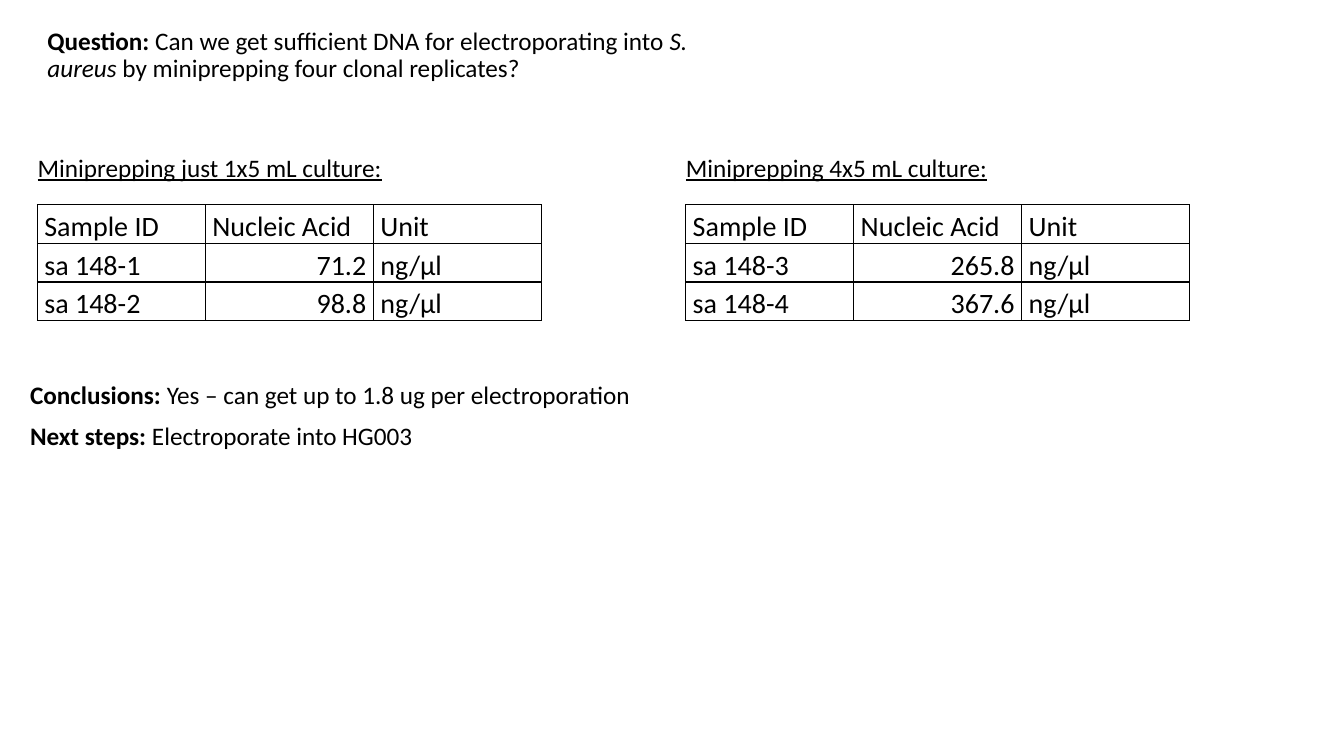
from dataclasses import dataclass
from lxml.etree import SubElement as Sub
from pptx import Presentation as Deck
from pptx.dml.color import RGBColor as Rgb
from pptx.enum.text import MSO_ANCHOR as Anchor, MSO_AUTO_SIZE as Fit, PP_ALIGN as Align
from pptx.oxml.ns import qn
from pptx.util import Inches, Pt


@dataclass(frozen=True)
class Theme:
    font: str = "Calibri"
    ink: Rgb = Rgb(0, 0, 0)
    body: int = 18
    grid: int = 20
    rule: int = 1
    pad: float = 0.07


def write(para, text, theme, size=None, bold=False, italic=False, under=False):
    run = para.add_run()
    run.text = text
    font = run.font
    font.name, font.size = theme.font, Pt(size or theme.body)
    font.bold, font.italic, font.underline = bold, italic, under
    font.color.rgb = theme.ink


class Page:
    def __init__(self, deck, theme):
        self.theme = theme
        self.wide, self.high = deck.slide_width, deck.slide_height
        self.slide = deck.slides.add_slide(deck.slide_layouts[5])

    def area(self, left, top, width, height):
        return [round(share * side / 100) for share, side in
                zip((left, top, width, height), (self.wide, self.high) * 2)]

    def fill(self, shape, paras, line=None, before=0, fit=Fit.NONE):
        frame = shape.text_frame
        frame.word_wrap, frame.auto_size = True, fit
        frame.vertical_anchor = Anchor.TOP
        for n, parts in enumerate(paras):
            para = frame.add_paragraph() if n else frame.paragraphs[0]
            para.alignment = Align.LEFT
            para.line_spacing, para.space_before = line, Pt(before)
            for text, look in parts:
                write(para, text, self.theme, **look)

    def title(self, area, parts, **look):
        shape = self.slide.shapes.title
        shape.left, shape.top, shape.width, shape.height = self.area(*area)
        self.fill(shape, [parts], **look)

    def text(self, area, paras, **look):
        self.fill(self.slide.shapes.add_textbox(*self.area(*area)), paras, **look)

    def table(self, area, rows):
        table = self.slide.shapes.add_table(
            len(rows), len(rows[0]), *self.area(*area)).table
        table.first_row = table.horz_banding = False
        for r, row in enumerate(rows):
            for c, text in enumerate(row):
                self.cell(table.cell(r, c), text, r > 0 and c == 1)

    def cell(self, cell, text, right):
        theme = self.theme
        cell.margin_left = cell.margin_right = Inches(theme.pad)
        cell.margin_top = cell.margin_bottom = 0
        cell.vertical_anchor = Anchor.BOTTOM
        para = cell.text_frame.paragraphs[0]
        para.line_spacing = 1.15
        para.alignment = Align.RIGHT if right else Align.LEFT
        write(para, text, theme, size=theme.grid)
        props = cell._tc.get_or_add_tcPr()
        for side in "LRTB":
            line = Sub(props, qn(f"a:ln{side}"), w=str(Pt(theme.rule)))
            Sub(Sub(line, qn("a:solidFill")), qn("a:srgbClr"), val=str(theme.ink))
        cell.fill.background()


def main():
    deck = Deck()
    deck.slide_width, deck.slide_height = Inches(13.33), Inches(7.5)
    page = Page(deck, Theme())
    bold, plain = {"bold": True}, {}
    page.title((2.78, 3.07, 49.36, 27.2), [
        ("Question:", bold),
        (" Can we get sufficient DNA for electroporating into", plain),
        (" S. aureus ", {"italic": True}),
        ("by miniprepping four clonal replicates?", plain),
    ], line=0.9, before=10)
    page.text((1.5, 50, 46.43, 21.87), [
        [("Conclusions: ", bold),
         ("Yes – can get up to 1.8 ug per electroporation", plain)],
        [("Next steps: ", bold), ("Electroporate into HG003", plain)],
    ], line=0.9, before=10)

    head = ("Sample ID", "Nucleic Acid", "Unit")
    preps = [
        ("Miniprepping just 1x5 mL culture:",
         [("sa 148-1", "71.2"), ("sa 148-2", "98.8")]),
        ("Miniprepping 4x5 mL culture:",
         [("sa 148-3", "265.8"), ("sa 148-4", "367.6")]),
    ]
    for n, (label, yields) in enumerate(preps):
        left = 2.78 + n * 48.24
        page.text((left - 0.72, 19.47, 29.93, 5.33),
                  [[(label, {"under": True})]], fit=Fit.SHAPE_TO_FIT_TEXT)
        rows = [head] + [(name, mass, "ng/µl") for name, mass in yields]
        page.table((left, 27.07, 37.5, 5.12 * len(rows)), rows)
    deck.save("out.pptx")


if __name__ == "__main__":
    main()
